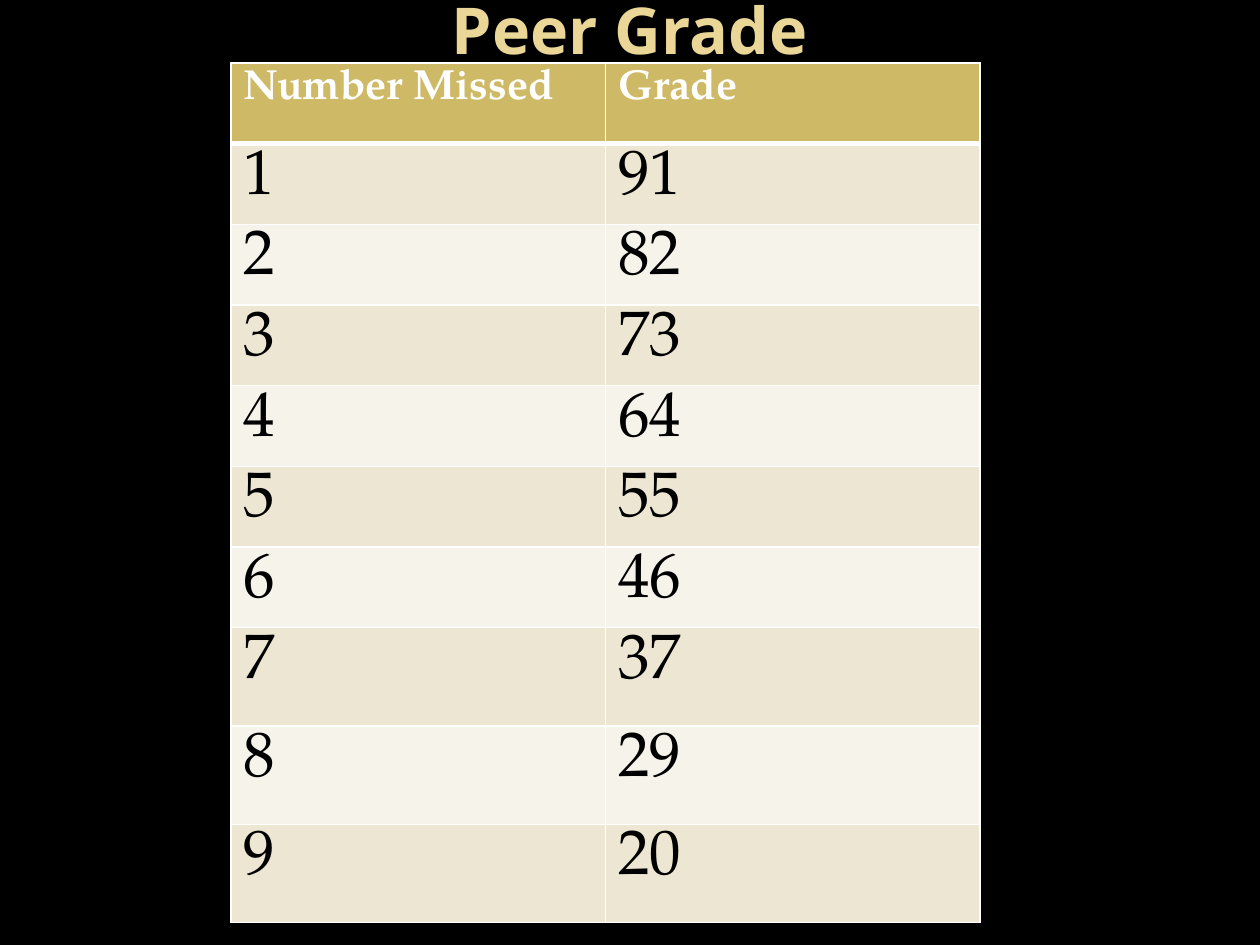
from lxml.etree import SubElement
from pptx import Presentation
from pptx.dml.color import RGBColor
from pptx.enum.text import MSO_ANCHOR, PP_ALIGN
from pptx.oxml.ns import qn
from pptx.util import Pt

BLACK = RGBColor(0x00, 0x00, 0x00)
WHITE = RGBColor(0xFF, 0xFF, 0xFF)
GOLD = RGBColor(0xEA, 0xD6, 0x96)
HEADER = RGBColor(0xCE, 0xB9, 0x66)
BANDS = (RGBColor(0xED, 0xE6, 0xD3), RGBColor(0xF6, 0xF3, 0xEA))

TITLE_FONT = "Noto Sans"
TABLE_FONT = "TeX Gyre Pagella"

HEADINGS = ("Number Missed", "Grade")
GRADES = (91, 82, 73, 64, 55, 46, 37, 29, 20)
COL_WIDTH = 214
ROW_HEIGHTS = [46.1] * 7 + [56.2] * 3


def set_font(p, name, size, color, bold):
    f = p.font
    f.name, f.size, f.bold = name, Pt(size), bold
    f.color.rgb = color


def add_title(s, text):
    tf = s.shapes.add_textbox(Pt(36), Pt(-11.9), Pt(648), Pt(56.2)).text_frame
    tf.word_wrap = True
    tf.vertical_anchor = MSO_ANCHOR.MIDDLE
    p = tf.paragraphs[0]
    p.text = text
    p.alignment = PP_ALIGN.CENTER
    set_font(p, TITLE_FONT, 36.9, GOLD, True)


def set_borders(cell, **widths):
    """Draw white cell borders; keys are L, R, T and B, values are points."""
    tc_pr = cell._tc.get_or_add_tcPr()
    for side, width in widths.items():
        ln = SubElement(tc_pr, qn(f"a:ln{side}"), w=str(Pt(width)))
        fill = SubElement(ln, qn("a:solidFill"))
        SubElement(fill, qn("a:srgbClr"), val=str(WHITE))


def fill_cell(cell, text, row):
    is_header = row == 0
    set_borders(cell, L=1, R=1, T=3 if row == 1 else 1, B=3 if is_header else 1)
    cell.fill.solid()
    cell.fill.fore_color.rgb = HEADER if is_header else BANDS[(row - 1) % 2]
    p = cell.text_frame.paragraphs[0]
    p.text = str(text)
    if is_header:
        set_font(p, TABLE_FONT, 24, WHITE, True)
    else:
        set_font(p, TABLE_FONT, 36, BLACK, False)
        # Tight margins let the large digits fit the row height
        cell.margin_top, cell.margin_bottom = Pt(2.8), Pt(0)


def add_grade_table(s):
    rows = [HEADINGS, *enumerate(GRADES, start=1)]
    table = s.shapes.add_table(
        len(rows), len(HEADINGS), Pt(132), Pt(36),
        Pt(COL_WIDTH * len(HEADINGS)), Pt(sum(ROW_HEIGHTS))).table
    for column in table.columns:
        column.width = Pt(COL_WIDTH)
    for i, (values, height) in enumerate(zip(rows, ROW_HEIGHTS)):
        table.rows[i].height = Pt(height)
        for j, value in enumerate(values):
            fill_cell(table.cell(i, j), value, i)


def main():
    prs = Presentation()
    prs.slide_width, prs.slide_height = Pt(720), Pt(540)
    s = prs.slides.add_slide(prs.slide_layouts[6])
    s.background.fill.solid()
    s.background.fill.fore_color.rgb = BLACK
    add_title(s, "Peer Grade")
    add_grade_table(s)
    prs.save("out.pptx")


if __name__ == "__main__":
    main()
